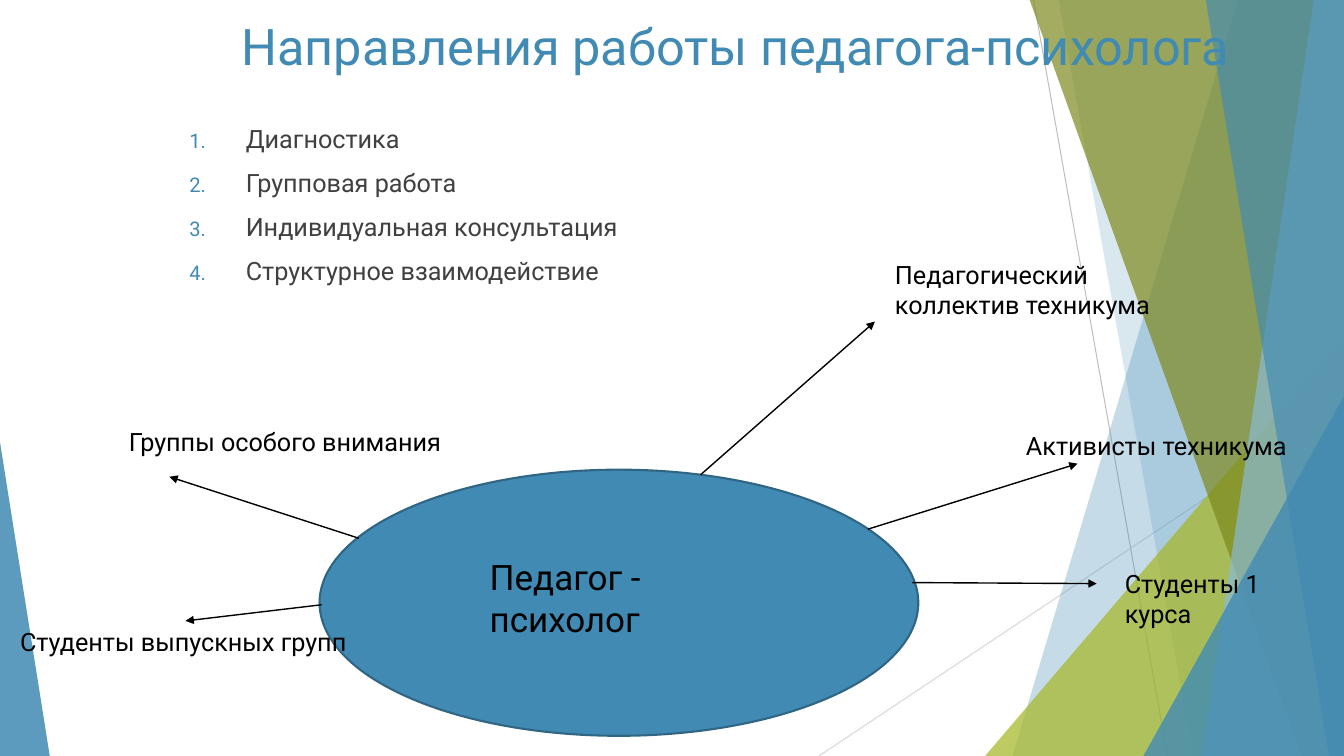
from pptx import Presentation, util as u
from pptx.dml.color import RGBColor
from pptx.enum import shapes, text
from pptx.oxml import ns, xmlchemy

FONT = "Roboto"
BLUE = RGBColor(0x41, 0x8A, 0xB3)
DARK_BLUE = RGBColor(0x30, 0x66, 0x84)
LIGHT_BLUE = RGBColor(0x8A, 0xBA, 0xD4)
GREEN = RGBColor(0xA6, 0xB7, 0x27)
OLIVE = RGBColor(0x7D, 0x89, 0x1D)
BLACK = RGBColor(0, 0, 0)
GREY = RGBColor(0x40, 0x40, 0x40)
SILVER = RGBColor(0xBF, 0xBF, 0xBF)
PALE_GREY = RGBColor(0xD9, 0xD9, 0xD9)

WIDTH, HEIGHT = u.Inches(13.33), u.Inches(7.5)

DIRECTIONS = ["Диагностика", "Групповая работа", "Индивидуальная консультация",
              "Структурное взаимодействие"]

# Points and boxes in percent of the diagram: label, label box, arrow start, arrow end
GROUPS = [
    ("Группы особого внимания", (8.85, 33.6, 26.25, 8), (26.7, 56.8), (12.6, 44.6)),
    ("Педагогический коллектив техникума", (65.85, 0.4, 25.13, 14.2), (52.13, 44.2), (65.1, 13.8)),
    ("Активисты техникума", (75.6, 34.4, 23.48, 8), (64.58, 55), (80.18, 42)),
    ("Студенты 1 курса", (82.95, 61.8, 16.13, 8), (67.88, 65.6), (81.6, 65.8)),
    ("Студенты выпускных групп", (0.75, 73.2, 26.03, 8), (23.93, 70), (13.8, 73.2)),
]

# Facets of the ribbon: top and bottom of the left edge in percent, colour, opacity
FACETS = [
    (70.5, 7.6, BLUE, 30),
    (20.5, 57.9, BLUE, 20),
    (12.4, 88.2, OLIVE, 70),
    (91.6, 60.4, LIGHT_BLUE, 70),
    (61.5, 95.8, BLUE, 65),
]


def slide_box(left, top, width, height):
    """Turn percents of the slide into lengths."""
    return WIDTH * left / 100, HEIGHT * top / 100, WIDTH * width / 100, HEIGHT * height / 100


def point_in(box, x, y):
    left, top, width, height = box
    return int(left + width * x / 100), int(top + height * y / 100)


def box_in(box, x, y, width, height):
    return (*point_in(box, x, y), int(box[2] * width / 100), int(box[3] * height / 100))


def add_child(parent, tag, **attributes):
    child = xmlchemy.OxmlElement(tag)
    for name, value in attributes.items():
        child.set(name, str(value))
    parent.append(child)
    return child


def paint(shape, colour, opacity=100):
    shape.shadow.inherit = False
    shape.fill.solid()
    shape.fill.fore_color.rgb = colour
    shape.line.fill.background()
    if opacity < 100:
        colour_element = shape.element.spPr.find(".//" + ns.qn("a:srgbClr"))
        add_child(colour_element, "a:alpha", val=opacity * 1000)


def add_line(slide, start, end, colour, width, arrow=False):
    line = slide.shapes.add_connector(shapes.MSO_CONNECTOR.STRAIGHT, *start, *end)
    line.line.color.rgb = colour
    line.line.width = u.Pt(width)
    properties = line.element.spPr
    if arrow:
        add_child(properties.find(ns.qn("a:ln")), "a:tailEnd", type="triangle")
    add_child(properties, "a:effectLst")


def add_triangle(slide, box, apex, colour, opacity):
    triangle = slide.shapes.add_shape(shapes.MSO_SHAPE.ISOSCELES_TRIANGLE, *box)
    triangle.adjustments[0] = apex
    paint(triangle, colour, opacity)


def add_facet(slide, box, top, bottom, colour, opacity):
    builder = slide.shapes.build_freeform(*point_in(box, top, 0))
    corners = [(100, 0), (100, 100), (bottom, 100)]
    builder.add_line_segments([point_in(box, *corner) for corner in corners])
    paint(builder.convert_to_shape(), colour, opacity)


def format_text(frame, size, colour, **paragraph_formats):
    frame.word_wrap = True
    frame.auto_size = text.MSO_AUTO_SIZE.NONE
    frame.vertical_anchor = text.MSO_ANCHOR.TOP
    for paragraph in frame.paragraphs:
        for name, value in paragraph_formats.items():
            setattr(paragraph, name, value)
        for run in paragraph.runs:
            for name, value in {"name": FONT, "size": u.Pt(size)}.items():
                setattr(run.font, name, value)
            run.font.color.rgb = colour


def add_text(slide, box, wording, size, colour, **paragraph_formats):
    frame = slide.shapes.add_textbox(*map(int, box)).text_frame
    frame.text = wording
    format_text(frame, size, colour, **paragraph_formats)
    return frame


def draw_ribbon(slide, box):
    # Thin lines lie under the facets
    add_line(slide, point_in(box, 13.5, 0), point_in(box, 50.8, 100), SILVER, 0.75)
    add_line(slide, point_in(box, 100, 53.7), point_in(box, -46.3, 100), PALE_GREY, 0.75)
    for facet in FACETS[:2]:
        add_facet(slide, box, *facet)
    add_triangle(slide, box_in(box, 0, 44.4, 100, 55.6), 1, GREEN, 72)
    for facet in FACETS[2:]:
        add_facet(slide, box, *facet)
    add_triangle(slide, box_in(box, 44.1, 52.4, 55.9, 47.6), 1, BLUE, 80)


def draw_title(slide, box):
    title = slide.shapes.title
    for name, value in zip(("left", "top", "width", "height"), box):
        setattr(title, name, int(value))
    title.text_frame.text = "Направления работы педагога-психолога"
    format_text(title.text_frame, 36, BLUE, alignment=text.PP_ALIGN.CENTER)
    # Bring the title in front of the ribbon
    slide.shapes.element.append(title.element)


def draw_directions(slide, box):
    frame = add_text(slide, box, "\n".join(DIRECTIONS), 18, GREY, space_before=u.Pt(10))
    indent = u.Inches(0.56)
    for paragraph in frame.paragraphs:
        properties = paragraph._p.get_or_add_pPr()
        properties.set("marL", str(indent))
        properties.set("indent", str(-indent))
        add_child(add_child(properties, "a:buClr"), "a:srgbClr", val=BLUE)
        add_child(properties, "a:buSzPct", val=80000)
        add_child(properties, "a:buFont", typeface=FONT)
        add_child(properties, "a:buAutoNum", type="arabicPeriod")


def draw_diagram(slide, box):
    # Centre
    ellipse = slide.shapes.add_shape(shapes.MSO_SHAPE.OVAL, *box_in(box, 23.78, 43.2, 44.55, 52.8))
    paint(ellipse, BLUE)
    ellipse.line.color.rgb = DARK_BLUE
    ellipse.line.width = u.Pt(1.5)
    add_text(slide, box_in(box, 35.7, 59.2, 23.4, 10.4), "Педагог - психолог", 25, BLACK)
    # Groups around it
    for label, label_box, start, end in GROUPS:
        add_line(slide, point_in(box, *start), point_in(box, *end), BLACK, 1, arrow=True)
        add_text(slide, box_in(box, *label_box), label, 18, BLACK)


def main():
    presentation = Presentation()
    presentation.slide_width, presentation.slide_height = WIDTH, HEIGHT
    slide = presentation.slides.add_slide(presentation.slide_layouts[5])
    draw_ribbon(slide, slide_box(73.3, 0, 26.7, 100))
    add_triangle(slide, box_in(slide_box(0, 0, 100, 100), 0, 58.5, 3.7, 41.5), 0, BLUE, 85)
    draw_title(slide, slide_box(13.65, 1.3, 82.2, 25.6))
    draw_directions(slide, slide_box(13.35, 15.6, 82.2, 45.6))
    draw_diagram(slide, slide_box(0, 33.33, 100, 66.67))
    presentation.save("out.pptx")


if __name__ == "__main__":
    main()
